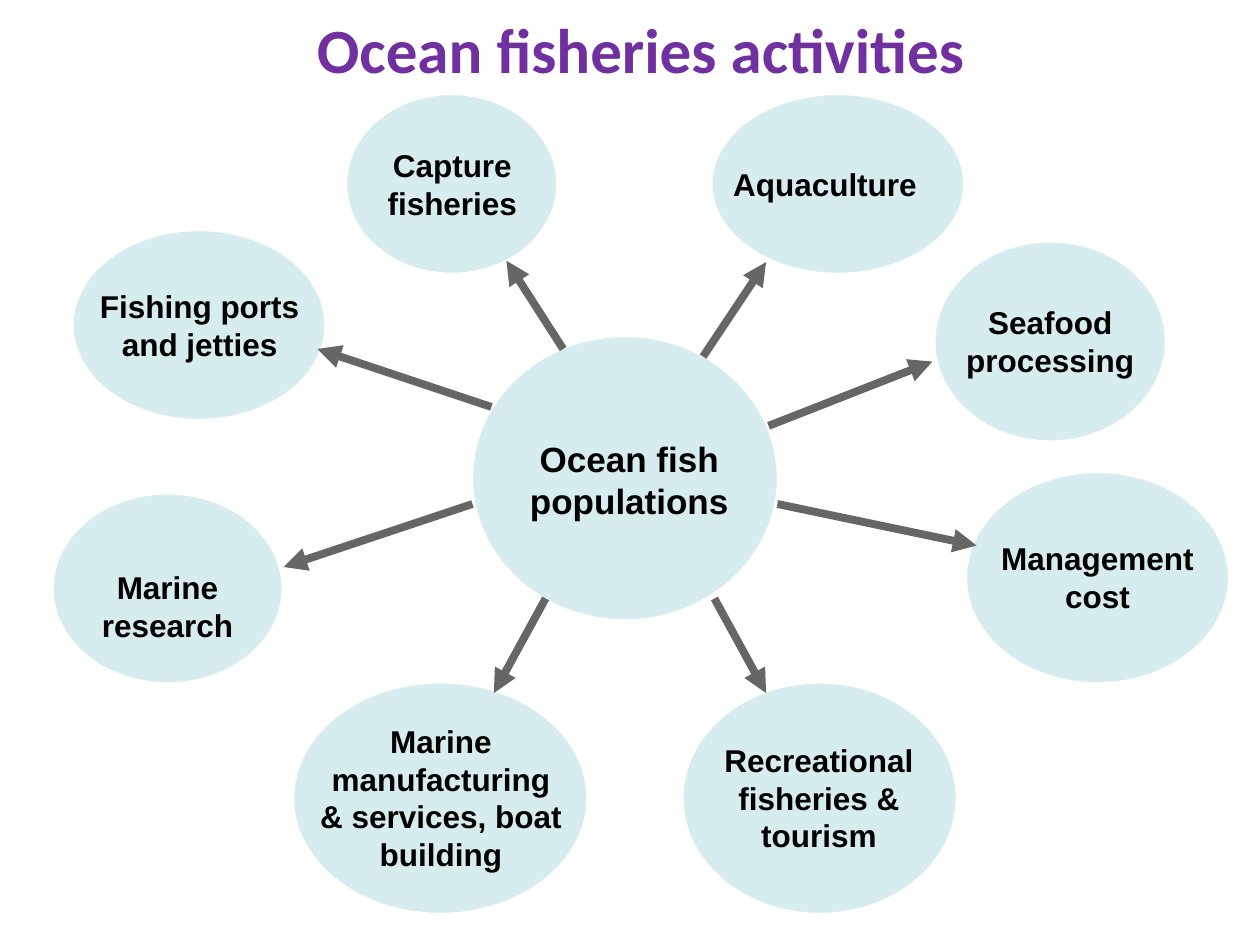
from dataclasses import dataclass

from lxml import etree
from pptx import Presentation
from pptx.dml.color import RGBColor
from pptx.enum.shapes import MSO_CONNECTOR as Connector, MSO_SHAPE as Shape
from pptx.enum.text import MSO_ANCHOR as Anchor, PP_ALIGN as Align
from pptx.oxml.ns import qn
from pptx.util import Inches, Pt


@dataclass(frozen=True)
class Theme:
    title: str = "7030A0"
    text: str = "000000"
    bubble: str = "D6ECEE"
    outline: str = "FFFFFF"
    arrow: str = "666666"
    title_font: str = "Calibri"
    body_font: str = "Arial"
    title_size: int = 36
    center_size: int = 20
    label_size: int = 18
    outline_width: float = 0.75
    arrow_width: float = 4.5


def apply(target, values):
    for name, value in values.items():
        setattr(target, name, value)


def inches(lengths):
    return [Inches(length) for length in lengths]


class DiagramSlide:
    def __init__(self, slide, theme):
        self.shapes = slide.shapes
        self.theme = theme

    def text(self, box, wording, size, color=None, font=None,
             align=Align.CENTER, anchor=Anchor.TOP):
        frame = self.shapes.add_textbox(*inches(box)).text_frame
        apply(frame, {"word_wrap": True, "vertical_anchor": anchor})
        paragraph = frame.paragraphs[0]
        paragraph.alignment = align
        run = paragraph.add_run()
        run.text = wording
        apply(run.font, {"name": font or self.theme.body_font,
                         "size": Pt(size), "bold": True})
        run.font.color.rgb = RGBColor.from_string(color or self.theme.text)

    def title(self, box, wording):
        theme = self.theme
        self.text(box, wording, theme.title_size, theme.title,
                  theme.title_font, anchor=Anchor.MIDDLE)

    def bubble(self, oval, label_box, label, size, align=Align.CENTER):
        theme = self.theme
        shape = self.shapes.add_shape(Shape.OVAL, *inches(oval))
        shape.shadow.inherit = False
        shape.fill.solid()
        shape.fill.fore_color.rgb = RGBColor.from_string(theme.bubble)
        shape.line.color.rgb = RGBColor.from_string(theme.outline)
        shape.line.width = Pt(theme.outline_width)
        self.text(label_box, label, size, align=align)

    def arrow(self, start, end):
        connector = self.shapes.add_connector(
            Connector.STRAIGHT, *inches(start + end))
        connector.line.color.rgb = RGBColor.from_string(self.theme.arrow)
        connector.line.width = Pt(self.theme.arrow_width)
        line = connector.line._get_or_add_ln()
        etree.SubElement(line, qn("a:tailEnd"), type="triangle")
        etree.SubElement(connector._element.spPr, qn("a:effectLst"))


# Each activity: oval box, label box, label, label alignment
ACTIVITIES = [
    ((5.65, 0.75, 2, 1.42), (5.72, 1.26, 1.95, 0.71),
     "Aquaculture", Align.LEFT),
    ((2.75, 0.75, 1.67, 1.42), (2.88, 1.11, 1.42, 0.7),
     "Capture fisheries", Align.CENTER),
    ((7.42, 1.92, 1.83, 1.58), (7.46, 2.36, 1.75, 0.7),
     "Seafood processing", Align.CENTER),
    ((7.67, 3.75, 2.08, 1.67), (7.8, 4.23, 1.82, 0.7),
     "Management cost", Align.CENTER),
    ((5.42, 5.42, 2.17, 1.83), (5.5, 5.83, 2, 1),
     "Recreational fisheries & tourism", Align.CENTER),
    ((2.33, 5.42, 2.33, 1.83), (2.42, 5.68, 2.16, 1.3),
     "Marine manufacturing & services, boat building", Align.CENTER),
    ((0.42, 3.92, 1.82, 1.5), (0.33, 4.46, 2, 0.4),
     "Marine research", Align.CENTER),
    ((0.58, 1.83, 2, 1.5), (0.67, 2.23, 1.83, 0.7),
     "Fishing ports and jetties", Align.CENTER),
]

# Clockwise from the top right, pointing away from the center
ARROWS = [
    ((5.58, 2.83), (6.08, 2.08)),
    ((6.1, 3.38), (7.4, 2.87)),
    ((6.17, 4), (7.75, 4.33)),
    ((5.67, 4.75), (6.08, 5.5)),
    ((4.33, 4.75), (3.92, 5.5)),
    ((3.75, 4), (2.25, 4.5)),
    ((3.9, 3.23), (2.52, 2.77)),
    ((4.47, 2.77), (4.02, 2.07)),
]


def main():
    presentation = Presentation()
    apply(presentation, {"slide_width": Inches(10),
                         "slide_height": Inches(7.5)})
    slide = presentation.slides.add_slide(presentation.slide_layouts[6])
    theme = Theme()
    diagram = DiagramSlide(slide, theme)

    diagram.title((0.67, 0.17, 8.83, 0.42), "Ocean fisheries activities")
    diagram.bubble((3.75, 2.67, 2.42, 2.25), (4.08, 3.42, 1.83, 0.77),
                   "Ocean fish populations", theme.center_size)
    for oval, label_box, label, align in ACTIVITIES:
        diagram.bubble(oval, label_box, label, theme.label_size, align)
    for start, end in ARROWS:
        diagram.arrow(start, end)

    presentation.save("out.pptx")


if __name__ == "__main__":
    main()
